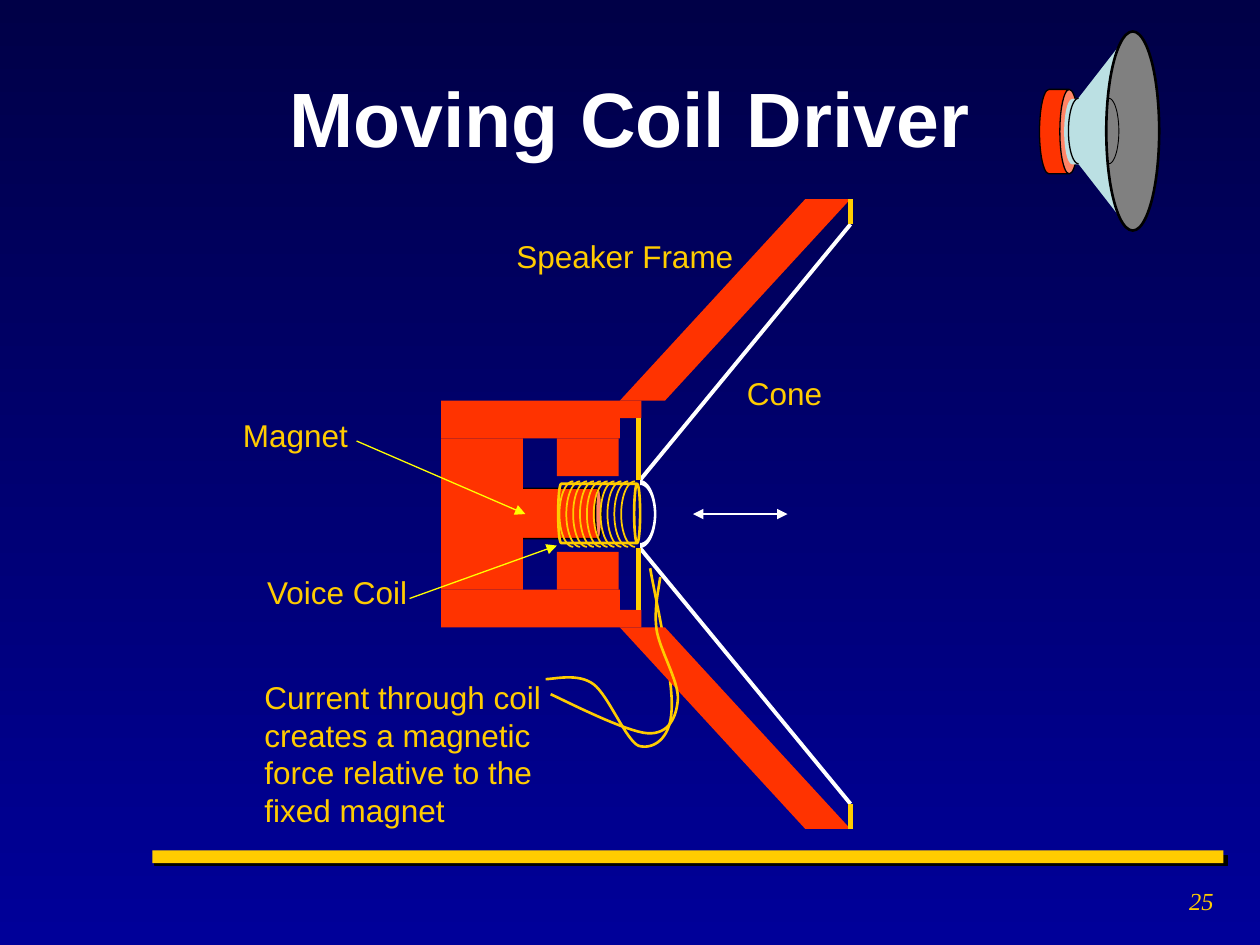
import math

from lxml import etree
from pptx import Presentation
from pptx.dml.color import RGBColor
from pptx.enum.shapes import MSO_CONNECTOR, MSO_SHAPE
from pptx.enum.text import MSO_ANCHOR, PP_ALIGN
from pptx.oxml.ns import qn
from pptx.util import Inches, Pt

RECTANGLE, CAN, OVAL = MSO_SHAPE.RECTANGLE, MSO_SHAPE.CAN, MSO_SHAPE.OVAL
PARALLELOGRAM = MSO_SHAPE.PARALLELOGRAM
STRAIGHT = MSO_CONNECTOR.STRAIGHT
LEFT, CENTER, RIGHT = PP_ALIGN.LEFT, PP_ALIGN.CENTER, PP_ALIGN.RIGHT
MIDDLE = MSO_ANCHOR.MIDDLE

SLIDE_WIDTH, SLIDE_HEIGHT = Inches(10), Inches(7.5)
COLUMNS = 10
CELL = SLIDE_WIDTH / COLUMNS  # square grid cell: 10 columns by 7.5 rows
AXIS = 4.08  # row on which the driver is mirrored
ICON_AXIS = 1.04
ABOVE, BELOW = -1, 1


class Theme:
    background = ("000047", "000099")
    gold, yellow, red = "FFCC00", "FFFF00", "FF3300"
    white, black, gray, pale_blue = "FFFFFF", "000000", "808080", "BBE0E3"
    font, number_font = "Arial", "Times New Roman"
    title_size, label_size, number_size = 44, 18, 14


def grid(*lengths):
    return [round(length * CELL) for length in lengths]


def style_shape(shape, fill=None, line=None, weight=0.75):
    shape.shadow.inherit = False
    if fill:
        shape.fill.solid()
        shape.fill.fore_color.rgb = RGBColor.from_string(fill)
    else:
        shape.fill.background()
    if line:
        shape.line.color.rgb = RGBColor.from_string(line)
        shape.line.width = Pt(weight)
    else:
        shape.line.fill.background()


def add_preset(slide, kind, box, fill=None, line=None, weight=0.75,
               adjustment=None, rotation=0):
    shape = slide.shapes.add_shape(kind, *grid(*box))
    style_shape(shape, fill, line, weight)
    if adjustment is not None:
        shape.adjustments[0] = adjustment
    shape.rotation = rotation
    return shape


def add_outline(slide, points, closed=False, **style):
    first, *rest = [grid(*point) for point in points]
    builder = slide.shapes.build_freeform(*first)
    builder.add_line_segments(rest, close=closed)
    style_shape(builder.convert_to_shape(), **style)


def add_line(slide, start, end, color, weight, arrows=()):
    connector = slide.shapes.add_connector(STRAIGHT, *grid(*start, *end))
    connector.line.color.rgb = RGBColor.from_string(color)
    connector.line.width = Pt(weight)
    outline = connector.line._get_or_add_ln()
    for arrow in arrows:
        etree.SubElement(outline, qn(f"a:{arrow}")).set("type", "triangle")
    etree.SubElement(connector._element.spPr, qn("a:effectLst"))


def write_text(frame, text, size, color, font=Theme.font, alignment=LEFT,
               bold=False, italic=False):
    frame.word_wrap = True
    paragraph = frame.paragraphs[0]
    paragraph.alignment = alignment
    run = paragraph.add_run()
    run.text = text
    run.font.name, run.font.size = font, Pt(size)
    run.font.bold, run.font.italic = bold, italic
    run.font.color.rgb = RGBColor.from_string(color)


def add_label(slide, text, box, size=Theme.label_size, **style):
    text_box = slide.shapes.add_textbox(*grid(*box))
    write_text(text_box.text_frame, text, size, Theme.gold, **style)


def half_ellipse(x, y, radius_x, radius_y, direction, steps=24):
    """Points from top to bottom; direction is -1 to bulge left, 1 right."""
    angles = [math.pi * step / steps for step in range(steps + 1)]
    return [(x + direction * radius_x * math.sin(angle),
             y - radius_y * math.cos(angle)) for angle in angles]


def smooth_curve(points, steps=16):
    """Sample joined cubic curves given as start, then control, control, end."""
    sampled = [points[0]]
    for first in range(0, len(points) - 1, 3):
        segment = points[first:first + 4]
        for step in range(1, steps + 1):
            t = step / steps
            weights = [math.comb(3, k) * t ** k * (1 - t) ** (3 - k)
                       for k in range(4)]
            sampled.append(tuple(sum(w * point[axis] for w, point in zip(weights, segment))
                                 for axis in (0, 1)))
    return sampled


def add_lead_wire(slide, points):
    add_outline(slide, smooth_curve(points), line=Theme.gold, weight=1.5)


def add_coil(slide):
    add_preset(slide, CAN, (4.25, 3.75, 0.4, 0.65), Theme.red, Theme.black,
               adjustment=0.12, rotation=90)
    add_preset(slide, CAN, (4.52, 3.75, 0.47, 0.65), line=Theme.gold, weight=1.5,
               adjustment=0.1, rotation=90)
    turns, first, last = 10, 4.55, 5.04
    for turn in range(turns):
        x = first + turn * (last - first) / (turns - 1)
        add_outline(slide, half_ellipse(x, AXIS, 0.11, 0.26, -1),
                    line=Theme.gold, weight=1)


def add_driver_half(slide, side):
    """Draw the frame, magnet yoke and cone on one side of the axis."""
    def mirrored_box(left, width, near, far):
        top = AXIS + (near if side == BELOW else -far)
        return left, top, width, far - near

    for bounds in ((4.42, 0.49, 0.3, 0.6),    # pole
                   (3.5, 1.42, 0.6, 0.9),     # yoke
                   (4.92, 0.17, 0.76, 0.9)):  # frame foot
        add_preset(slide, RECTANGLE, mirrored_box(*bounds), Theme.red)
    add_line(slide, (5.08, AXIS + side * 0.27), (6.75, AXIS + side * 2.3),
             Theme.white, 2.25)
    frame = add_preset(slide, PARALLELOGRAM, mirrored_box(4.92, 1.83, 0.9, 2.5),
                       Theme.red, adjustment=0.92)
    if side == BELOW:
        frame._element.spPr.xfrm.set("flipV", "1")
    for x, near, far in ((5.07, 0.27, 0.76), (6.75, 2.3, 2.5)):
        add_line(slide, (x, AXIS + side * near), (x, AXIS + side * far),
                 Theme.gold, 3)


def add_driver(slide):
    add_lead_wire(slide, [(4.33, 5.39), (4.4, 5.39), (4.59, 5.34), (4.71, 5.43),
                          (4.83, 5.52), (4.97, 5.88), (5.07, 5.92),
                          (5.18, 5.95), (5.32, 5.87), (5.33, 5.64),
                          (5.35, 5.4), (5.2, 4.74), (5.16, 4.51)])
    add_coil(slide)
    add_preset(slide, RECTANGLE, (3.5, AXIS - 0.6, 0.65, 1.2), Theme.red)
    for side in (ABOVE, BELOW):
        add_driver_half(slide, side)
    outer = half_ellipse(5.08, AXIS, 0.13, 0.27, 1)
    inner = half_ellipse(5.08, AXIS, 0.11, 0.23, 1)
    add_outline(slide, outer + inner[::-1], closed=True, fill=Theme.white)
    add_lead_wire(slide, [(4.37, 5.51), (4.5, 5.57), (4.97, 5.81), (5.14, 5.82),
                          (5.31, 5.83), (5.37, 5.69), (5.38, 5.55),
                          (5.39, 5.41), (5.23, 5.15), (5.21, 4.99),
                          (5.19, 4.82), (5.23, 4.67), (5.24, 4.58)])


def add_speaker_icon(slide):
    add_preset(slide, CAN, (8.07, 0.89, 0.67, 0.31), Theme.red, Theme.black,
               adjustment=0.48, rotation=90)
    add_preset(slide, CAN, (8.34, 0.89, 0.52, 0.31), Theme.pale_blue,
               adjustment=0.41, rotation=90)
    add_outline(slide, [(8.97, 0.25), (8.55, 0.79), (8.55, 1.29), (8.97, 1.83)],
                closed=True, fill=Theme.pale_blue)
    add_preset(slide, OVAL, (8.78, 0.25, 0.42, 1.58), Theme.gray, Theme.black, 1.5)
    for x, direction, weight in ((8.56, -1, 0.75), (8.8, 1, 0.5)):
        add_outline(slide, half_ellipse(x, ICON_AXIS, 0.08, 0.26, direction),
                    line=Theme.black, weight=weight)


def add_labels(slide):
    add_label(slide, "Cone", (5.83, 2.92, 1, 0.4))
    add_label(slide, "Magnet", (1.83, 3.25, 1.17, 0.4))
    add_label(slide, "Voice Coil", (1.75, 4.5, 1.58, 0.4), alignment=RIGHT)
    add_label(slide, "Speaker Frame", (4, 1.83, 2, 0.4))
    add_label(slide, "Current through coil creates a magnetic force relative "
              "to the fixed magnet", (2, 5.33, 2.83, 1.31))
    for start, end in (((3.25, 4.75), (4.42, 4.33)), ((2.83, 3.5), (4.17, AXIS))):
        add_line(slide, start, end, Theme.yellow, 0.75, ["tailEnd"])
    add_line(slide, (5.5, AXIS), (6.25, AXIS), Theme.white, 1.5,
             ["headEnd", "tailEnd"])


def add_background(slide):
    fill = slide.background.fill
    fill.gradient()
    fill.gradient_angle = 270
    for stop, color in zip(fill.gradient_stops, Theme.background):
        stop.color.rgb = RGBColor.from_string(color)


def add_footer(slide):
    add_preset(slide, RECTANGLE, (1.23, 6.79, 8.51, 0.08), Theme.black, Theme.black)
    add_preset(slide, RECTANGLE, (1.21, 6.75, 8.5, 0.1), Theme.gold)
    add_label(slide, "25", (8.1, 6.98, 1.63, 0.52), Theme.number_size,
              font=Theme.number_font, alignment=RIGHT, italic=True)


def add_title(slide, text):
    title = slide.shapes.title
    title.left, title.top, title.width, title.height = grid(0.5, 0.3, 9, 1.25)
    title.text_frame.vertical_anchor = MIDDLE
    write_text(title.text_frame, text, Theme.title_size, Theme.white,
               alignment=CENTER, bold=True)


def main():
    presentation = Presentation()
    presentation.slide_width, presentation.slide_height = SLIDE_WIDTH, SLIDE_HEIGHT
    slide = presentation.slides.add_slide(presentation.slide_layouts[5])
    add_background(slide)
    add_footer(slide)
    add_title(slide, "Moving Coil Driver")
    add_driver(slide)
    add_speaker_icon(slide)
    add_labels(slide)
    presentation.save("out.pptx")


if __name__ == "__main__":
    main()
